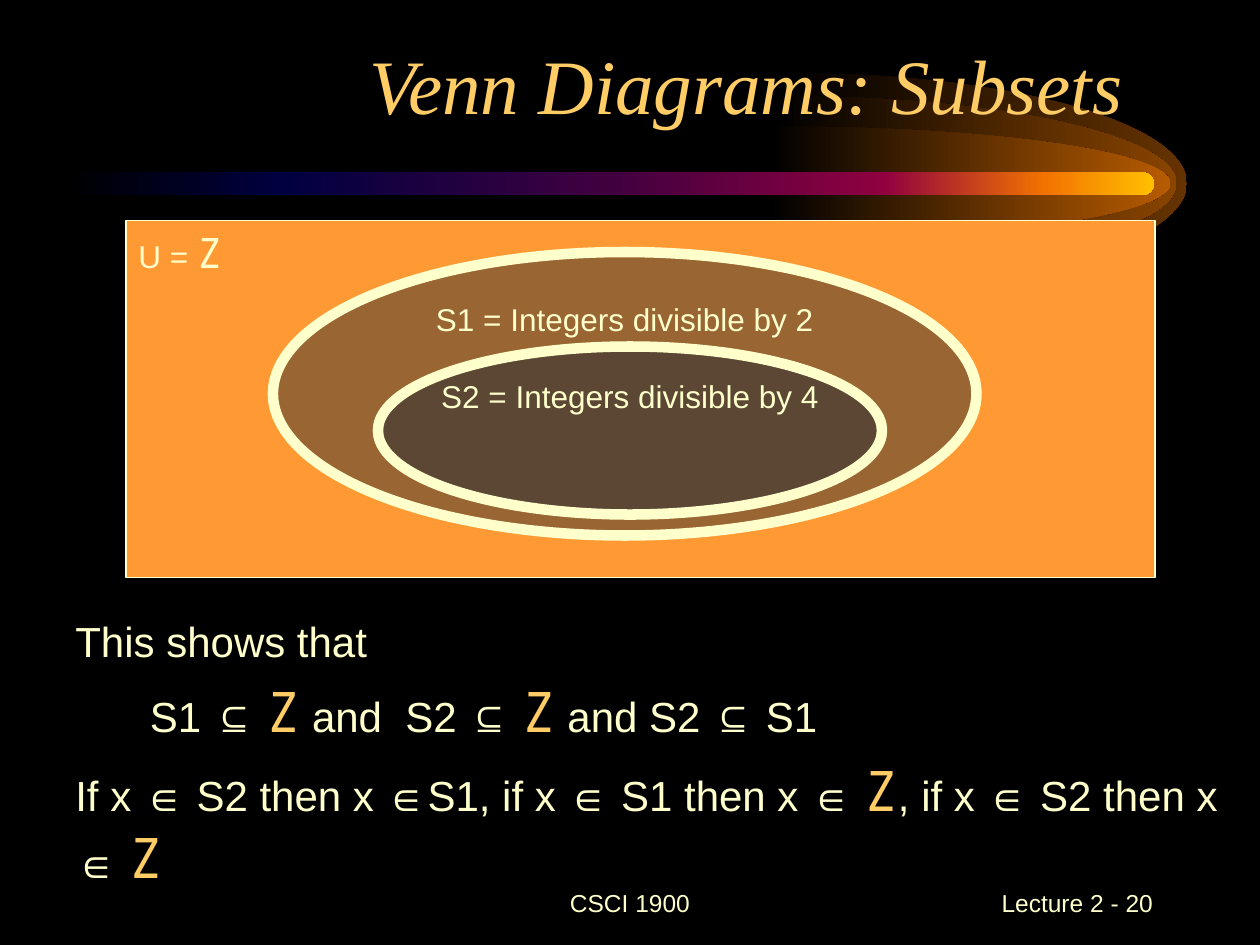
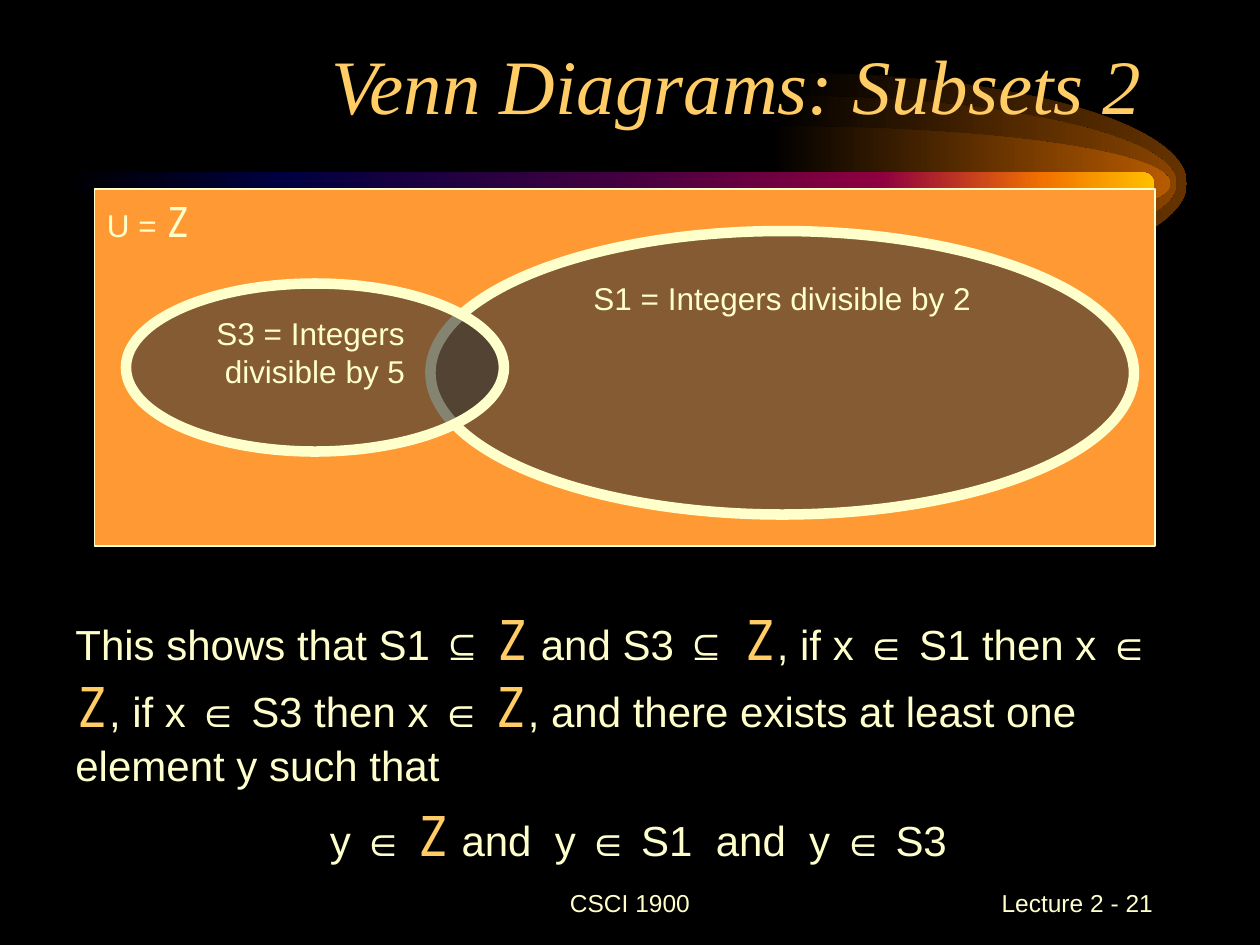
from lxml import etree
from pptx import Presentation
from pptx.dml.color import RGBColor
from pptx.enum.shapes import MSO_SHAPE
from pptx.enum.text import MSO_ANCHOR, PP_ALIGN
from pptx.oxml.ns import qn
from pptx.util import Pt

RECTANGLE, ELLIPSE = MSO_SHAPE.RECTANGLE, MSO_SHAPE.OVAL
ROUNDED = MSO_SHAPE.ROUNDED_RECTANGLE
TOP, MIDDLE, BOTTOM = MSO_ANCHOR.TOP, MSO_ANCHOR.MIDDLE, MSO_ANCHOR.BOTTOM
LEFT, CENTER, RIGHT = PP_ALIGN.LEFT, PP_ALIGN.CENTER, PP_ALIGN.RIGHT

color = RGBColor.from_string
BLACK, CREAM, GOLD, ORANGE, GRAY = "000000", "FFFFCC", "FFCC66", "FF9933", "333333"

# Glows: left edge, vertical radius, outer colour
GLOWS = [(449.3, 63, "663300"), (443.5, 50, "894400"), (439.9, 32.6, "B75B00")]
GLOW_CENTER_Y, GLOW_RADIUS_X, GLOW_STUB = 104.8, 225.4, 3.5
ARC = 0.55  # control-point distance of a quarter ellipse, relative to its radius
BAND_STOPS = [(0, BLACK), (20, "000040"), (50, "400040"),
              (75, "8F0040"), (90, "F27300"), (100, "FFBF00")]

# Venn sets: box, opacity in percent, label lines
# Body: a bar separates runs; a space that stands alone is as large as the sign Z
SLIDES = [
    {
        "title": "Venn Diagrams: Subsets ",
        "number": 20,
        "universe": (72, 126, 588, 204),
        "sets": [
            ((156, 144, 402, 162), 50, ["S1 = Integers divisible by 2"]),
            ((216, 198, 288, 96), 60, ["S2 = Integers divisible by 4"]),
        ],
        "body_box": (0, 348, 720, 128),
        "body": [
            ("This shows that", LEFT),
            ("\t S1 ⊆ Z and  S2 ⊆ Z and S2 ⊆ S1", LEFT),
            ("If x ∈ S2 then x ∈S1, if x ∈ S1 then x ∈ Z, "
             "if x ∈ S2 then x ∈ Z", LEFT),
        ],
    },
    {
        "title": "Venn Diagrams: Subsets 2",
        "number": 21,
        "universe": (54, 108, 606, 204),
        "sets": [
            ((246, 132, 402, 162), 60, ["S1 = Integers divisible by 2"]),
            ((72, 162, 216, 96), 60, ["S3 = Integers ", "divisible by 5"]),
        ],
        "body_box": (0, 342, 696, 160),
        "body": [
            ("This shows that S1 ⊆ Z and S3 ⊆| Z, if x ∈ S1 then x ∈ Z, "
             "if x ∈ S3 then x ∈ Z, and there exists at least one "
             "element y such that", LEFT),
            (" y ∈ Z and  y ∈ S1  and  y ∈ S3| ", CENTER),
        ],
    },
]


def write(shape, lines, size, z_size=None, z_color=CREAM, anchor=TOP, wrap=True):
    """Write (text, alignment) lines, setting the integer sign Z in its own font."""
    frame = shape.text_frame
    frame_format = {"word_wrap": wrap, "vertical_anchor": anchor,
                    "margin_left": Pt(7.2), "margin_right": Pt(7.2),
                    "margin_top": Pt(3.6), "margin_bottom": Pt(3.6)}
    for name, value in frame_format.items():
        setattr(frame, name, value)
    for index, (text, alignment) in enumerate(lines):
        paragraph = frame.add_paragraph() if index else frame.paragraphs[0]
        paragraph.alignment = alignment
        for piece in text.replace("Z", "|Z|").split("|"):
            if not piece:
                continue
            is_sign = piece == "Z"
            run = paragraph.add_run()
            run.text = piece
            run_format = {"name": "Noto Sans Mono" if is_sign else "Arial",
                          "size": Pt(z_size if piece in ("Z", " ") else size)}
            for name, value in run_format.items():
                setattr(run.font, name, value)
            run.font.color.rgb = color(z_color if is_sign else CREAM)


def fill_gradient(shape, stops):
    """Fill a borderless shape with a left-to-right gradient."""
    shape.shadow.inherit = False
    shape.line.fill.background()
    shape.fill.gradient()
    shape.fill.gradient_angle = 0
    stop_list = next(shape.element.iter(qn("a:gsLst")))
    for stop in list(stop_list):
        stop_list.remove(stop)
    for percent, stop_color in stops:
        stop = etree.SubElement(stop_list, qn("a:gs"), pos=str(percent * 1000))
        etree.SubElement(stop, qn("a:srgbClr"), val=stop_color)


presentation = Presentation()
presentation.slide_width, presentation.slide_height = Pt(720), Pt(540)
master = presentation.slide_master
master.background.fill.solid()
master.background.fill.fore_color.rgb = color(BLACK)
title_only = presentation.slide_layouts[5]
slides = [presentation.slides.add_slide(title_only) for _ in SLIDES]

# Comet: drawn once, then moved to the master
comet = []
for left, radius_y, glow_color in GLOWS:
    top, middle, bottom = 0, radius_y, 2 * radius_y
    tip = GLOW_STUB + GLOW_RADIUS_X
    bend_x = GLOW_STUB + ARC * GLOW_RADIUS_X
    bend_y = ARC * radius_y
    corners = [(tip, middle), (GLOW_STUB, bottom), (0, bottom), (GLOW_STUB, middle)]
    builder = slides[0].shapes.build_freeform(Pt(GLOW_STUB), Pt(top))
    builder.add_line_segments([(Pt(x), Pt(y)) for x, y in corners], close=True)
    glow = builder.convert_to_shape(Pt(left), Pt(GLOW_CENTER_Y - radius_y))

    # The first two segments become quarter ellipses
    controls = [[(bend_x, top), (tip, middle - bend_y)],
                [(tip, middle + bend_y), (bend_x, bottom)]]
    segments = list(glow.element.iter(qn("a:lnTo")))
    for segment, bends in zip(segments, controls):
        segment.tag = qn("a:cubicBezTo")
        for index, (x, y) in enumerate(bends):
            point = etree.Element(qn("a:pt"), x=str(Pt(x)), y=str(Pt(y)))
            segment.insert(index, point)
    fill_gradient(glow, [(0, BLACK), (100, glow_color)])
    comet.append(glow)
band = slides[0].shapes.add_shape(ROUNDED, Pt(36), Pt(98.5), Pt(623.5), Pt(13))
band.adjustments[0] = 0.5
fill_gradient(band, BAND_STOPS)
comet.append(band)
for shape in comet:
    master.shapes.element.append(shape.element)

for slide, content in zip(slides, SLIDES):
    # Title
    title = slide.shapes.title
    title.left, title.top, title.width, title.height = Pt(48), Pt(18), Pt(612), Pt(60)
    write(title, [(content["title"], RIGHT)], 44, anchor=BOTTOM)
    title_font = title.text_frame.paragraphs[0].runs[0].font
    for name, value in {"name": "Times New Roman", "italic": True}.items():
        setattr(title_font, name, value)
    title_font.color.rgb = color(GOLD)

    # Footers
    for text, alignment, left, width in [
            ("CSCI 1900", CENTER, 246, 228),
            (f"Lecture 2 - {content['number']}", RIGHT, 516, 150)]:
        footer = slide.shapes.add_textbox(Pt(left), Pt(498), Pt(width), Pt(36))
        write(footer, [(text, alignment)], 14, anchor=MIDDLE)

    # Venn diagram: universe first, then its sets
    diagram = [(RECTANGLE, content["universe"], ORANGE, 100, 0.75, [("U = Z", LEFT)])]
    for box, opacity, label in content["sets"]:
        lines = [(line, CENTER) for line in label]
        diagram.append((ELLIPSE, box, GRAY, opacity, 6, lines))
    for kind, box, fill_color, opacity, line_width, lines in diagram:
        region = slide.shapes.add_shape(kind, *map(Pt, box))
        region.shadow.inherit = False
        region.fill.solid()
        region.fill.fore_color.rgb = color(fill_color)
        if opacity < 100:
            fill_element = next(region.element.iter(qn("a:srgbClr")))
            etree.SubElement(fill_element, qn("a:alpha"), val=str(opacity * 1000))
        region.line.color.rgb = color(CREAM)
        region.line.width = Pt(line_width)
        write(region, lines, 18, z_size=24, wrap=False)

    # Explanation: indented by 36 points, spaced by 20 percent
    body = slide.shapes.add_textbox(*map(Pt, content["body_box"]))
    write(body, content["body"], 24, z_size=32, z_color=GOLD)
    for properties in body.element.iter(qn("a:pPr")):
        properties.set("marL", str(Pt(36)))
        properties.set("indent", "0")
        space_before = etree.SubElement(properties, qn("a:spcBef"))
        etree.SubElement(space_before, qn("a:spcPct"), val="20000")

presentation.save("out.pptx")
